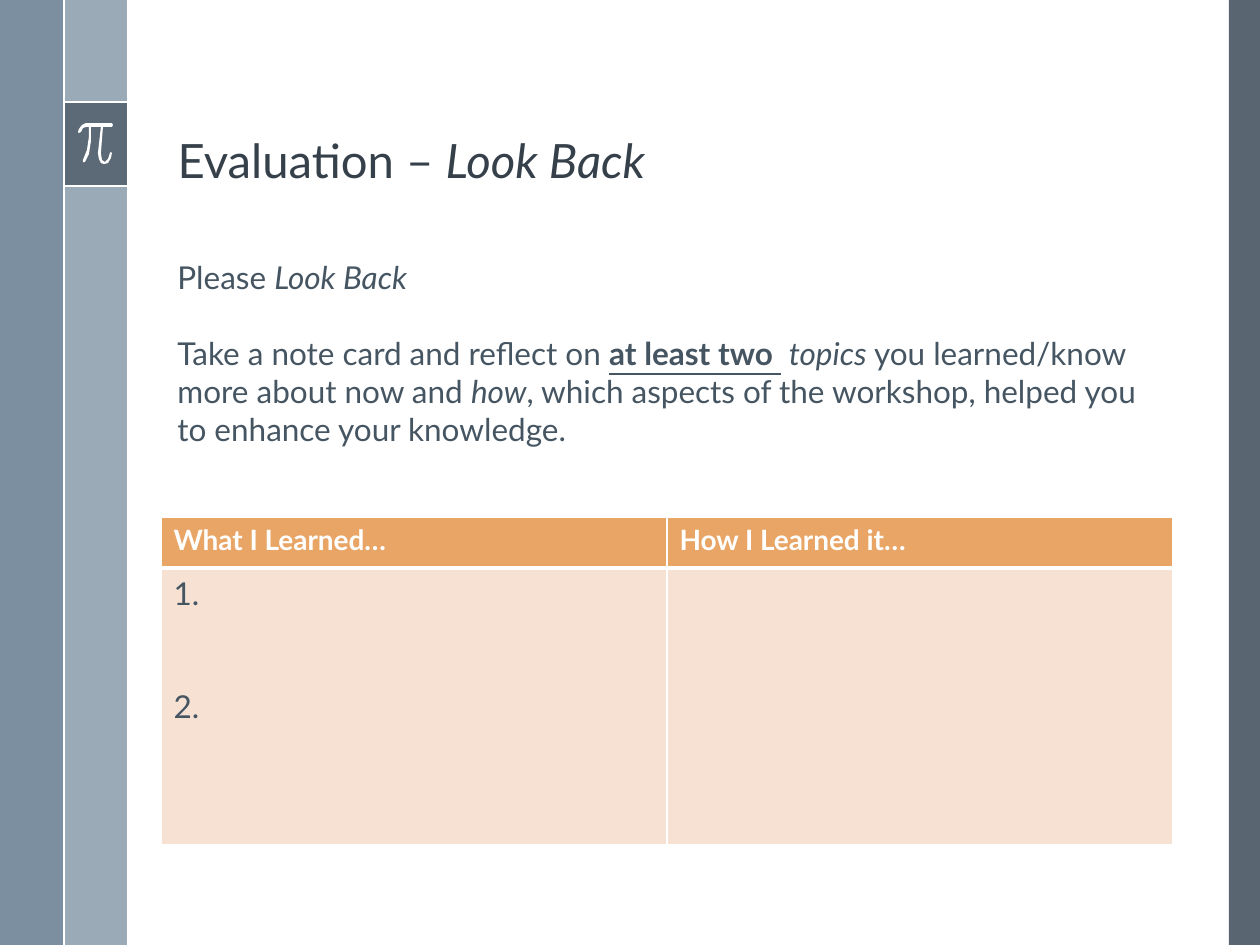
from lxml.etree import SubElement
from pptx import Presentation
from pptx.dml.color import RGBColor
from pptx.enum.shapes import MSO_CONNECTOR as Connector, MSO_SHAPE as Shape
from pptx.enum.text import MSO_ANCHOR as Anchor, MSO_AUTO_SIZE as AutoSize, PP_ALIGN as Align
from pptx.oxml import parse_xml
from pptx.oxml.ns import nsdecls, qn
from pptx.util import Emu, Pt

PX = 914400 / 126
WIDTH, HEIGHT = 1260, 945
FONT = "Lato"
WHITE = RGBColor(0xFF, 0xFF, 0xFF)
SLATE = RGBColor(0x47, 0x55, 0x62)
MIST = RGBColor(0x9B, 0xAA, 0xB7)
STEEL = RGBColor(0x6A, 0x80, 0x93)
TITLE = RGBColor(0x35, 0x40, 0x4A)
BODY = RGBColor(0x46, 0x55, 0x62)
ORANGE = RGBColor(0xE8, 0xA5, 0x65)
PEACH = RGBColor(0xF6, 0xE1, 0xD3)


def px(*lengths):
    """Turn pixel lengths into a list of EMU."""
    return [Emu(round(length * PX)) for length in lengths]


def write(para, text, size=18, color=BODY, bold=False, italic=False, underline=False):
    span = para.add_run()
    span.text = text
    font = span.font
    font.name, font.size, font.color.rgb = FONT, Pt(size), color
    font.bold, font.italic, font.underline = bold, italic, underline


deck = Presentation()
deck.slide_width, deck.slide_height = px(WIDTH, HEIGHT)
page = deck.slides.add_slide(deck.slide_layouts[5])
shapes = page.shapes

# Side bands: left, top, width, height, colour, opacity in percent
for left, top, width, height, color, opacity in [
    (1229, 0, 31, HEIGHT, SLATE, 90),
    (64, 0, 63, HEIGHT, MIST, 100),
    (0, 0, 63, HEIGHT, STEEL, 88),
    (64, 102, 63, 84, SLATE, 75),
]:
    band = shapes.add_shape(Shape.RECTANGLE, *px(left, top, width, height))
    band.shadow.inherit = False
    band.line.fill.background()
    band.fill.solid()
    band.fill.fore_color.rgb = color
    if opacity < 100:
        tint = band.fill._xPr.find(".//" + qn("a:srgbClr"))
        SubElement(tint, qn("a:alpha"), val=str(opacity * 1000))

for ends in [(64, 102, 127, 102), (64, 186, 127, 186), (64, 0, 64, HEIGHT)]:
    rule = shapes.add_connector(Connector.STRAIGHT, *px(*ends))
    rule.line.color.rgb = WHITE
    rule.line.width = Pt(1.5)
    SubElement(rule._element.spPr, qn("a:effectLst"))

# Pi sign
PI_OUTLINE = [
    (112, 123), (86, 123), (82, 125), (79, 129), (78, 132), (79, 133), (81, 132),
    (83, 128), (86, 127), (89, 127), (89, 137), (87, 150), (83, 160), (83, 162),
    (85, 162), (89, 154), (91, 141), (91, 127), (101, 127), (98, 153), (99, 159),
    (101, 163), (104, 164), (108, 163), (111, 158), (112, 153), (111, 152), (110, 153),
    (108, 159), (105, 162), (102, 160), (101, 153), (103, 127), (112, 127), (113, 125),
]
outline = shapes.build_freeform(*PI_OUTLINE[0], scale=PX)
outline.add_line_segments(PI_OUTLINE[1:], close=True)
pi_sign = outline.convert_to_shape()
pi_sign.shadow.inherit = False
pi_sign.fill.solid()
pi_sign.fill.fore_color.rgb = WHITE
pi_sign.line.fill.background()

# Title
title = shapes.title
title.left, title.top, title.width, title.height = px(165, 24, 1012, 171)
frame = title.text_frame
frame.auto_size = AutoSize.NONE
frame.vertical_anchor = Anchor.BOTTOM
para = frame.paragraphs[0]
para.alignment = Align.LEFT
para.line_spacing = 0.9
write(para, "Evaluation – ", size=27, color=TITLE)
write(para, "Look Back", size=27, color=TITLE, italic=True)

# Table
grid = shapes.add_table(2, 2, *px(161, 517, 1012, 328))
table = grid.table
table.horz_banding = False
for column in table.columns:
    column.width = px(506)[0]
for row, height in zip(table.rows, (51, 277)):
    row.height = px(height)[0]

HEAD_RULE = 3
for row, fill, top, bottom in [(0, ORANGE, 1, HEAD_RULE), (1, PEACH, HEAD_RULE, 1)]:
    for cell in table.rows[row].cells:
        cell.fill.solid()
        cell.fill.fore_color.rgb = fill
        borders = [("lnL", 1), ("lnR", 1), ("lnT", top), ("lnB", bottom)]
        for place, (side, points) in enumerate(borders):
            border = parse_xml(
                f'<a:{side} {nsdecls("a")} w="{Pt(points)}"><a:solidFill>'
                f'<a:srgbClr val="{WHITE}"/></a:solidFill></a:{side}>'
            )
            cell._tc.tcPr.insert(place, border)

for column, heading in enumerate(("What I Learned…", "How I Learned it…")):
    para = table.cell(0, column).text_frame.paragraphs[0]
    write(para, heading, size=16, color=WHITE, bold=True)

answers = table.cell(1, 0).text_frame
write(answers.paragraphs[0], "1.")
para = answers.add_paragraph()
para.space_before = Pt(43)
write(para, "2.")

# Instructions
box = shapes.add_textbox(*px(165, 252, 987, 204))
frame = box.text_frame
frame.word_wrap = True
frame.auto_size = AutoSize.SHAPE_TO_FIT_TEXT
para = frame.paragraphs[0]
write(para, "Please ")
write(para, "Look Back", italic=True)
para = frame.add_paragraph()
para.space_before = Pt(22)
for text, style in [
    ("Take a note card and reflect on ", {}),
    ("at least two ", {"bold": True, "underline": True}),
    (" ", {}),
    ("topics", {"italic": True}),
    (" you learned/know more about now and ", {}),
    ("how", {"italic": True}),
    (", which aspects of the workshop, helped you to enhance your knowledge.", {}),
]:
    write(para, text, **style)

deck.save("out.pptx")
